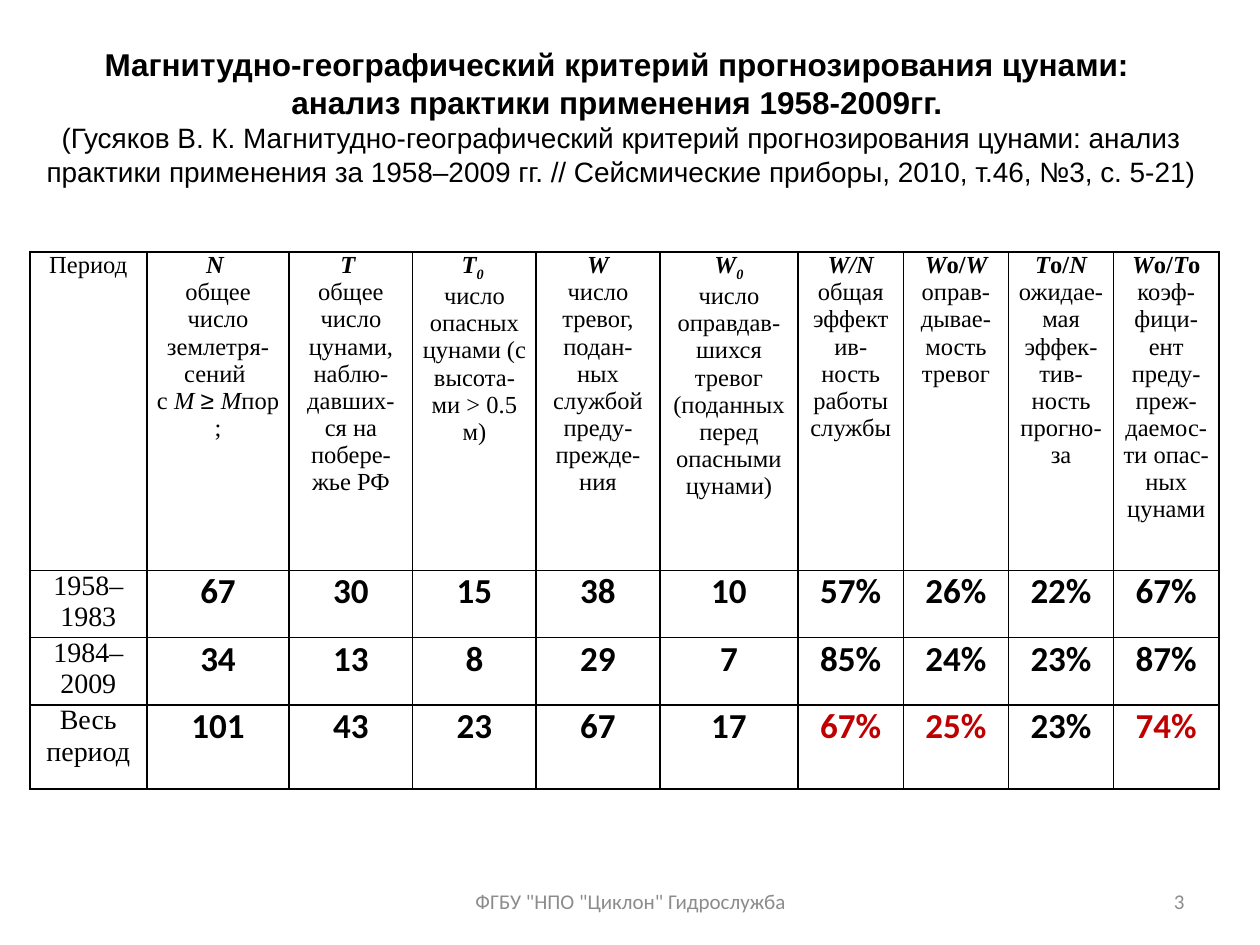
from dataclasses import dataclass

from lxml.etree import SubElement
from pptx import Presentation
from pptx.dml.color import RGBColor
from pptx.enum.text import MSO_ANCHOR, PP_ALIGN
from pptx.oxml.ns import qn
from pptx.util import Cm, Pt


@dataclass(frozen=True)
class Theme:
    black: RGBColor = RGBColor(0x00, 0x00, 0x00)
    accent: RGBColor = RGBColor(0xC0, 0x00, 0x00)
    grey: RGBColor = RGBColor(0x8C, 0x8C, 0x8C)
    sans: str = "Arial"
    serif: str = "Times New Roman"
    numeric: str = "Calibri"
    title: int = 18
    source: int = 16
    heading: int = 14
    period: int = 16
    value: int = 20
    footer: int = 12
    border: int = 1


THEME = Theme()


@dataclass(frozen=True)
class Style:
    font: str
    size: int
    color: RGBColor = THEME.black
    bold: bool = False
    align: PP_ALIGN = PP_ALIGN.CENTER


@dataclass(frozen=True)
class Piece:
    """Text with marks: b bold, i italic, s subscript, a sans font."""
    text: str
    marks: str = ""


@dataclass(frozen=True)
class Line:
    pieces: tuple[Piece, ...]
    style: Style


@dataclass(frozen=True)
class TextBlock:
    left: float
    top: float
    width: float
    height: float
    lines: tuple[Line, ...]
    anchor: MSO_ANCHOR = MSO_ANCHOR.TOP


@dataclass(frozen=True)
class Column:
    width: float
    heading: tuple[tuple[Piece, ...], ...]
    values: tuple[str, ...]
    total_color: RGBColor = THEME.black


def plain(text: str, style: Style) -> Line:
    return Line((Piece(text),), style)


def write_lines(frame, lines: tuple[Line, ...]) -> None:
    for index, line in enumerate(lines):
        paragraph = frame.paragraphs[0] if index == 0 else frame.add_paragraph()
        style = line.style
        paragraph.alignment = style.align
        paragraph.font.name = style.font
        paragraph.font.size = Pt(style.size)
        paragraph.font.color.rgb = style.color
        paragraph.font.bold = style.bold
        for piece in line.pieces:
            run = paragraph.add_run()
            run.text = piece.text
            if "b" in piece.marks:
                run.font.bold = True
            if "i" in piece.marks:
                run.font.italic = True
            if "a" in piece.marks:
                run.font.name = THEME.sans
            if "s" in piece.marks:
                run.font._element.set("baseline", "-25000")


def draw_text(slide, block: TextBlock) -> None:
    box = slide.shapes.add_textbox(
        Cm(block.left), Cm(block.top), Cm(block.width), Cm(block.height))
    box.text_frame.word_wrap = True
    box.text_frame.vertical_anchor = block.anchor
    write_lines(box.text_frame, block.lines)


def add_borders(cell) -> None:
    properties = cell._tc.get_or_add_tcPr()
    for position, side in enumerate(("lnL", "lnR", "lnT", "lnB")):
        edge = SubElement(properties, qn(f"a:{side}"), w=str(Pt(THEME.border)))
        fill = SubElement(edge, qn("a:solidFill"))
        SubElement(fill, qn("a:srgbClr"), val=str(THEME.black))
        properties.insert(position, edge)


def fill_cell(cell, lines: tuple[Line, ...]) -> None:
    cell.margin_left = cell.margin_right = Cm(0.18)
    cell.margin_top = cell.margin_bottom = 0
    cell.fill.background()
    add_borders(cell)
    write_lines(cell.text_frame, lines)


def draw_table(slide, left: float, top: float, columns: tuple[Column, ...],
               periods: tuple[str, ...], heights: tuple[float, ...]) -> None:
    table = slide.shapes.add_table(
        len(heights), len(columns) + 1, Cm(left), Cm(top),
        Cm(PERIOD_WIDTH + sum(column.width for column in columns)),
        Cm(sum(heights))).table
    table.first_row = table.horz_banding = False
    for row, height in zip(table.rows, heights):
        row.height = Cm(height)

    # Period column
    table.columns[0].width = Cm(PERIOD_WIDTH)
    fill_cell(table.cell(0, 0), (plain("Период", HEADING),))
    for row, period in enumerate(periods, start=1):
        fill_cell(table.cell(row, 0), (plain(period, PERIOD),))

    # Indicator columns
    for index, column in enumerate(columns, start=1):
        table.columns[index].width = Cm(column.width)
        fill_cell(table.cell(0, index),
                  tuple(Line(pieces, HEADING) for pieces in column.heading))
        for row, value in enumerate(column.values, start=1):
            color = column.total_color if row == len(periods) else THEME.black
            style = Style(THEME.numeric, THEME.value, color, bold=True)
            fill_cell(table.cell(row, index), (plain(value, style),))


TITLE = Style(THEME.sans, THEME.title, bold=True)
SOURCE = Style(THEME.sans, THEME.source)
HEADING = Style(THEME.serif, THEME.heading)
PERIOD = Style(THEME.serif, THEME.period)
FOOTER = Style(THEME.numeric, THEME.footer, THEME.grey)
PAGE = Style(THEME.numeric, THEME.footer, THEME.grey, align=PP_ALIGN.RIGHT)

TEXT_BLOCKS = (
    TextBlock(8.69, 17.65, 8.05, 1.02,
              (plain('ФГБУ "НПО "Циклон" Гидрослужба', FOOTER),), MSO_ANCHOR.MIDDLE),
    TextBlock(18.21, 17.65, 5.92, 1.02, (plain("3", PAGE),), MSO_ANCHOR.MIDDLE),
    TextBlock(0.61, 0.79, 23.83, 3.18, (
        plain("Магнитудно-географический критерий прогнозирования цунами: ", TITLE),
        plain("анализ практики применения 1958-2009гг. ", TITLE),
        plain("(Гусяков В. К. Магнитудно-географический критерий прогнозирования "
              "цунами: анализ практики применения за 1958–2009 гг. // "
              "Сейсмические приборы, 2010, т.46, №3, с. 5-21)", SOURCE))),
)

PERIOD_WIDTH, COUNT_WIDTH, RATIO_WIDTH = 2.36, 2.49, 2.12
PERIODS = ("1958–1983", "1984–2009", "Весь период")
ROW_HEIGHTS = (6.42, 1.35, 1.35, 1.7)

COLUMNS = (
    Column(2.87, ((Piece("N ", "bi"),),
                  (Piece("общее число землетря-сений "),),
                  (Piece("с "), Piece("М ", "i"), Piece("≥ ", "a"),
                   Piece("М", "i"), Piece("пор ;"))), ("67", "34", "101")),
    Column(COUNT_WIDTH, ((Piece("T ", "bi"),),
                         (Piece("общее число цунами, наблю-давших-ся на побере-жье РФ"),)),
           ("30", "13", "43")),
    Column(COUNT_WIDTH, ((Piece("T", "bi"), Piece("0 ", "bis")),
                         (Piece("число опасных цунами (с высота-ми > 0.5 м)"),)),
           ("15", "8", "23")),
    Column(COUNT_WIDTH, ((Piece("W", "bi"),),
                         (Piece("число тревог, подан-ных службой преду-прежде-ния"),)),
           ("38", "29", "67")),
    Column(2.79, ((Piece("W", "bi"), Piece("0", "bis")),
                  (Piece("число оправдав-шихся тревог (поданных перед опасными цунами)"),)),
           ("10", "7", "17")),
    Column(RATIO_WIDTH, ((Piece("W/N ", "bi"), Piece("общая эффектив-ность работы службы")),),
           ("57%", "85%", "67%"), THEME.accent),
    Column(RATIO_WIDTH, ((Piece("W", "bi"), Piece("o/", "b"), Piece("W ", "bi"),
                          Piece("оправ-дывае-мость тревог")),),
           ("26%", "24%", "25%"), THEME.accent),
    Column(RATIO_WIDTH, ((Piece("T", "bi"), Piece("o/", "b"), Piece("N ", "bi"),
                          Piece("ожидае-мая эффек-тив-ность прогно-за")),),
           ("22%", "23%", "23%")),
    Column(RATIO_WIDTH, ((Piece("W", "bi"), Piece("o/", "b"), Piece("T", "bi"), Piece("o ", "b"),
                          Piece("коэф-фици-ент преду-преж-даемос-ти опас-ных цунами")),),
           ("67%", "87%", "74%"), THEME.accent),
)


def main() -> None:
    presentation = Presentation()
    presentation.slide_width, presentation.slide_height = Cm(25.4), Cm(19.05)
    slide = presentation.slides.add_slide(presentation.slide_layouts[6])
    for block in TEXT_BLOCKS:
        draw_text(slide, block)
    draw_table(slide, 0.6, 5.08, COLUMNS, PERIODS, ROW_HEIGHTS)
    presentation.save("out.pptx")


if __name__ == "__main__":
    main()
